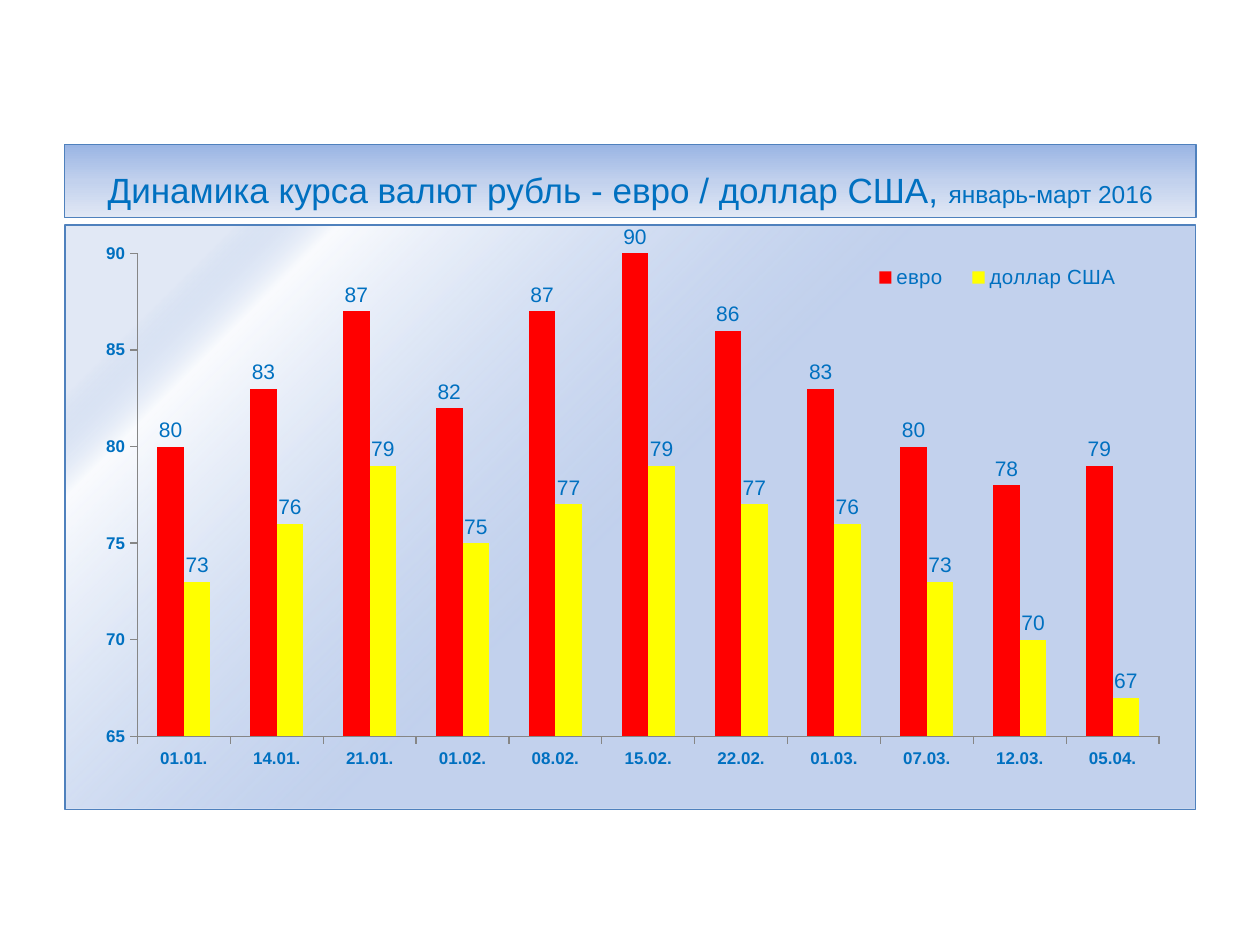
from pptx import Presentation
from pptx import util as u
from pptx.chart import data as chart_data
from pptx.dml import color
from pptx.enum import chart as chart_enum, text
from pptx.oxml import parse_xml
from pptx.oxml import ns

"""Builds a slide with a title bar and a column chart of exchange rates."""

COLORS = {
    "text": "0070C0", "border": "4F81BD", "axis": "868686",
    "евро": "FF0000", "доллар США": "FFFF00",
    "deep": "9AB5E4", "middle": "C2D1ED", "light": "E1E8F5",
}
TITLE_RUNS = [
    ("Динамика курса валют рубль - евро / доллар США, ", 20),
    ("январь-март 2016", 14),
]
DATES = ["01.01.", "14.01.", "21.01.", "01.02.", "08.02.", "15.02.",
         "22.02.", "01.03.", "07.03.", "12.03.", "05.04."]
RATES = {
    "евро": [80, 83, 87, 82, 87, 90, 86, 83, 80, 78, 79],
    "доллар США": [73, 76, 79, 75, 77, 79, 77, 76, 73, 70, 67],
}
TITLE_STOPS = [(0, "deep", 100), (50, "middle", 100), (100, "light", 100)]
CHART_STOPS = [(50, "middle", 100), (84, "deep", 5), (90, "light", 100)]
LINEAR = '<a:lin ang="5400000" scaled="0"/>'
RADIAL = ('<a:path path="circle"><a:fillToRect l="100000" t="100000"/></a:path>'
          '<a:tileRect r="-100000" b="-100000"/>')
LEFT, WIDTH = 1.3, 22.81
TITLE_BOX = (LEFT, 2.92, WIDTH, 1.47)
CHART_BOX = (LEFT, 4.52, WIDTH, 11.81)
PLOT_AREA = (0.064, 0.049, 0.904, 0.826)
LEGEND_AREA = (0.7, 0.06, 0.25, 0.06)


def rgb(name):
    return color.RGBColor.from_string(COLORS[name])


def apply(target, values):
    for name, value in values.items():
        setattr(target, name, value)


def format_font(font, size, bold=False):
    apply(font, {"name": "Arial", "size": u.Pt(size), "bold": bold})
    font.color.rgb = rgb("text")


def gradient_xml(stops, direction):
    marks = "".join(
        f'<a:gs pos="{position * 1000}"><a:srgbClr val="{COLORS[name]}">'
        f'<a:alpha val="{opacity * 1000}"/></a:srgbClr></a:gs>'
        for position, name, opacity in stops)
    return (f'<a:gradFill {ns.nsdecls("a")} rotWithShape="1">'
            f'<a:gsLst>{marks}</a:gsLst>{direction}</a:gradFill>')


def layout_xml(area, inner=False):
    target = '<c:layoutTarget val="inner"/>' if inner else ""
    modes = '<c:xMode val="edge"/><c:yMode val="edge"/>'
    sizes = "".join(f'<c:{key} val="{value}"/>' for key, value in zip("xywh", area))
    return parse_xml(f'<c:layout {ns.nsdecls("c")}><c:manualLayout>{target}{modes}'
                     f'{sizes}</c:manualLayout></c:layout>')


def add_title(slide):
    title = slide.shapes.title
    apply(title, dict(zip(("left", "top", "width", "height"), map(u.Cm, TITLE_BOX))))
    title.fill.gradient()
    gradient = title.element.spPr.find(ns.qn("a:gradFill"))
    gradient.getparent().replace(gradient, parse_xml(gradient_xml(TITLE_STOPS, LINEAR)))
    title.line.color.rgb = rgb("border")
    title.line.width = u.Pt(0.75)
    apply(title.text_frame, {
        "word_wrap": True, "auto_size": text.MSO_AUTO_SIZE.NONE,
        "vertical_anchor": text.MSO_ANCHOR.MIDDLE,
        "margin_top": u.Cm(0.35), "margin_bottom": 0})
    paragraph = title.text_frame.paragraphs[0]
    paragraph.alignment = text.PP_ALIGN.CENTER
    for wording, size in TITLE_RUNS:
        run = paragraph.add_run()
        run.text = wording
        format_font(run.font, size)


def format_axis(axis):
    apply(axis, {
        "has_major_gridlines": False,
        "major_tick_mark": chart_enum.XL_TICK_MARK.OUTSIDE,
        "minor_tick_mark": chart_enum.XL_TICK_MARK.NONE})
    axis.format.line.color.rgb = rgb("axis")
    format_font(axis.tick_labels.font, 9.7, True)


def format_series(series):
    series.smooth = False
    series.format.fill.solid()
    series.format.fill.fore_color.rgb = rgb(series.name)
    labels = series.data_labels
    apply(labels, {"show_value": True,
                   "position": chart_enum.XL_LABEL_POSITION.OUTSIDE_END})
    format_font(labels.font, 12)


def set_layouts(chart):
    plot_area = chart.element.find(".//" + ns.qn("c:plotArea"))
    legend = chart.element.find(".//" + ns.qn("c:legend"))
    for parent in (plot_area, legend):
        for layout in parent.findall(ns.qn("c:layout")):
            parent.remove(layout)
    plot_area.insert(0, layout_xml(PLOT_AREA, True))
    legend.find(ns.qn("c:legendPos")).addnext(layout_xml(LEGEND_AREA))


def add_chart(slide):
    data = chart_data.CategoryChartData()
    data.categories = DATES
    for name, values in RATES.items():
        data.add_series(name, values)
    chart = slide.shapes.add_chart(
        chart_enum.XL_CHART_TYPE.COLUMN_CLUSTERED, *map(u.Cm, CHART_BOX), data).chart
    apply(chart, {"has_title": False, "has_legend": True})
    apply(chart.font, {"name": "Calibri", "size": u.Pt(17.7)})
    apply(chart.plots[0], {"gap_width": 150, "overlap": 0, "vary_by_categories": False})
    apply(chart.value_axis, {"minimum_scale": 65, "maximum_scale": 90, "major_unit": 5})
    for axis in (chart.category_axis, chart.value_axis):
        format_axis(axis)
    for series in chart.plots[0].series:
        format_series(series)
    apply(chart.legend, {"position": chart_enum.XL_LEGEND_POSITION.RIGHT,
                         "include_in_layout": False})
    format_font(chart.legend.font, 11.7)
    set_layouts(chart)
    chart.element.find(ns.qn("c:txPr")).addprevious(parse_xml(
        f'<c:spPr {ns.nsdecls("c", "a")}>{gradient_xml(CHART_STOPS, RADIAL)}'
        f'<a:ln w="{u.Pt(0.75)}"><a:solidFill><a:srgbClr val="{COLORS["border"]}"/>'
        '</a:solidFill></a:ln></c:spPr>'))


def main():
    presentation = Presentation()
    apply(presentation, {"slide_width": u.Cm(25.4), "slide_height": u.Cm(19.05)})
    slide = presentation.slides.add_slide(presentation.slide_layouts.get_by_name("Title Only"))
    add_title(slide)
    add_chart(slide)
    presentation.save("out.pptx")


if __name__ == "__main__":
    main()
